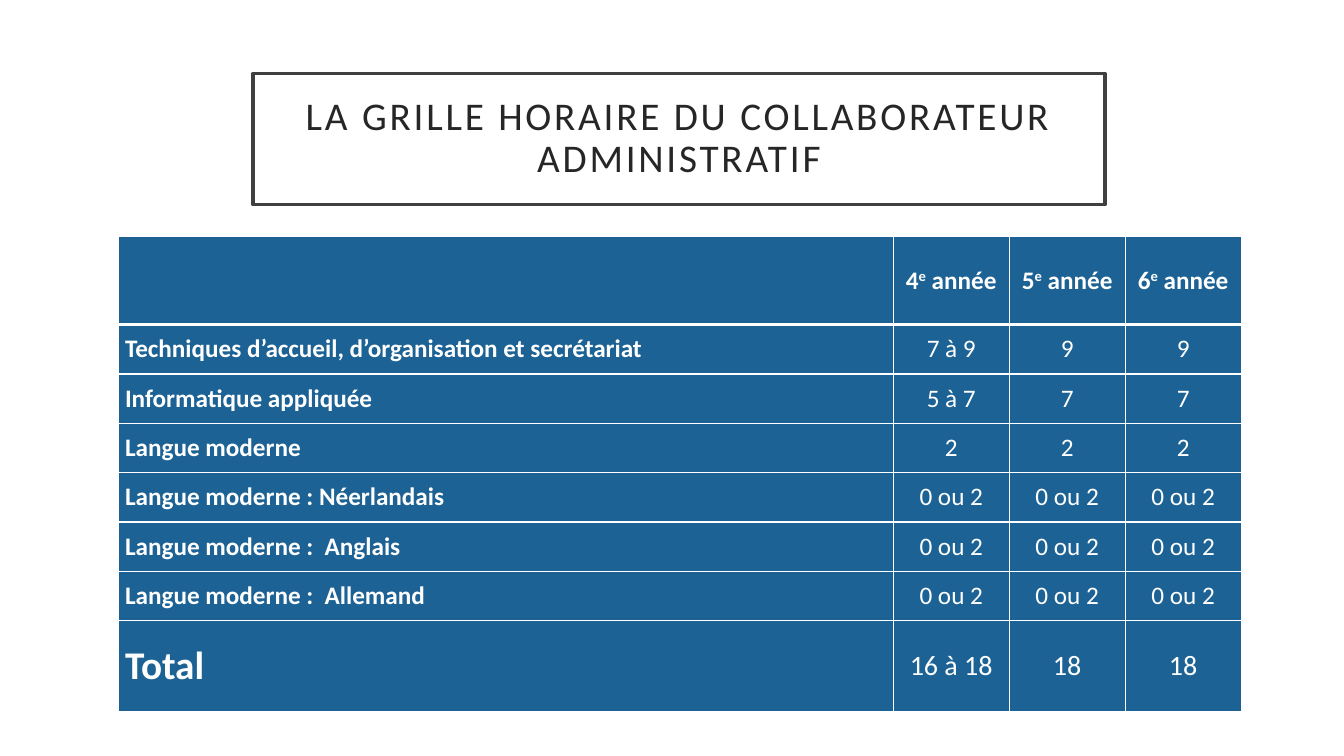
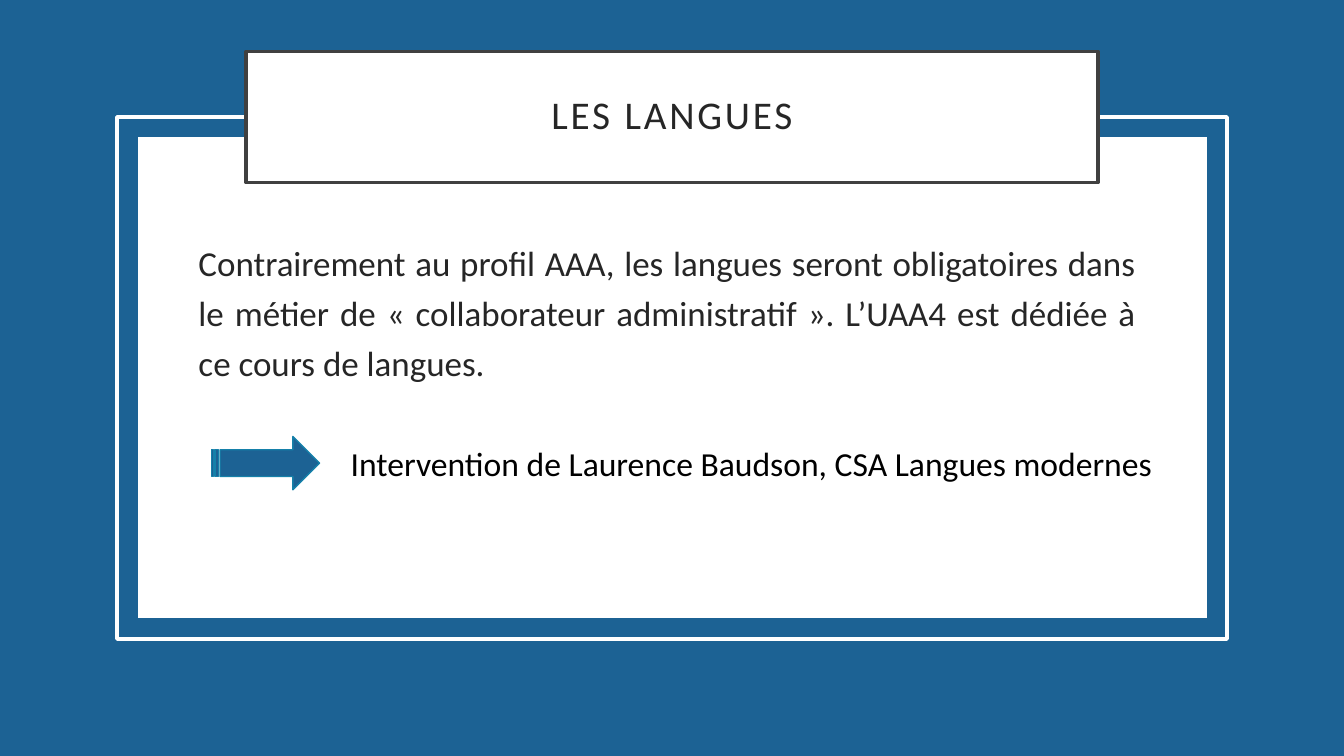
from dataclasses import dataclass

from lxml.etree import SubElement
from pptx import Presentation
from pptx.dml.color import RGBColor
from pptx.enum.shapes import MSO_SHAPE
from pptx.enum.text import MSO_ANCHOR, MSO_AUTO_SIZE, PP_ALIGN
from pptx.oxml import parse_xml
from pptx.oxml.ns import nsdecls, qn
from pptx.util import Inches, Pt


@dataclass(frozen=True)
class Theme:
    font: str = "Calibri"
    blue: str = "1C6294"
    arrow_edge: str = "1580A9"
    white: str = "FFFFFF"
    black: str = "000000"
    ink: str = "262626"
    frame: str = "404040"
    title: float = 28
    body: float = 25
    note: float = 24
    cell: float = 18
    total: float = 20
    thick: float = 2.5
    thin: float = 1


T = Theme()

# Content
GRID_TITLE = "LA GRILLE HORAIRE DU COLLABORATEUR ADMINISTRATIF"
YEARS = ["4", "5", "6"]
COURSES = [
    ("Techniques d’accueil, d’organisation et secrétariat", "7 à 9", "9", "9"),
    ("Informatique appliquée", "5 à 7", "7", "7"),
    ("Langue moderne", "2", "2", "2"),
    ("Langue moderne : Néerlandais", "0 ou 2", "0 ou 2", "0 ou 2"),
    ("Langue moderne :  Anglais", "0 ou 2", "0 ou 2", "0 ou 2"),
    ("Langue moderne :  Allemand", "0 ou 2", "0 ou 2", "0 ou 2"),
]
TOTAL = ("Total", "16 à 18", "18", "18")

LANG_TITLE = "LES LANGUES"
LANG_BODY = (
    "Contrairement au profil AAA, les langues seront obligatoires dans le métier de "
    "« collaborateur administratif ». L’UAA4 est dédiée à ce cours de langues."
)
LANG_NOTE = "Intervention de Laurence Baudson, CSA Langues modernes"

# Table measures
COL_WIDTHS = [7.69] + [1.15] * len(YEARS)
ROW_HEIGHTS = [0.87] + [0.49] * len(COURSES) + [0.9]


def rgb(value):
    return RGBColor.from_string(value)


def style(p, size, color, align=PP_ALIGN.LEFT, bold=False):
    p.alignment = align
    p.font.name = T.font
    p.font.size = Pt(size)
    p.font.bold = bold
    p.font.color.rgb = rgb(color)


def paint(shape, fill=None, line=None, width=T.thick):
    if fill:
        shape.fill.solid()
        shape.fill.fore_color.rgb = rgb(fill)
    else:
        shape.fill.background()
    if line:
        shape.line.color.rgb = rgb(line)
        shape.line.width = Pt(width)
    else:
        shape.line.fill.background()


def add_box(s, kind, box, **look):
    sp = s.shapes.add_shape(kind, *map(Inches, box))
    sp.shadow.inherit = False
    paint(sp, **look)


def add_text(s, box, text, size, color, align=PP_ALIGN.LEFT, spacing=None):
    tf = s.shapes.add_textbox(*map(Inches, box)).text_frame
    tf.word_wrap = True
    p = tf.paragraphs[0]
    p.text = text
    style(p, size, color, align)
    p.line_spacing = spacing


def set_title(s, text, left, top):
    """Place the framed title in front of everything drawn so far."""
    title = s.shapes.title
    title.left, title.top, title.width, title.height = map(Inches, (left, top, 8.45, 1.3))
    paint(title, T.white, T.frame)
    tf = title.text_frame
    tf.word_wrap = True
    tf.auto_size = MSO_AUTO_SIZE.NONE
    tf.vertical_anchor = MSO_ANCHOR.MIDDLE
    tf.margin_left = tf.margin_right = tf.margin_top = tf.margin_bottom = Inches(0.2)
    p = tf.paragraphs[0]
    r = p.add_run()
    r.text = text
    style(p, T.title, T.ink, PP_ALIGN.CENTER)
    p.line_spacing = 0.9
    r.font._element.set("spc", "200")
    s.shapes._spTree.append(title._element)


def set_borders(cell, bottom):
    tc_pr = cell._tc.get_or_add_tcPr()
    widths = {"lnL": T.thin, "lnR": T.thin, "lnT": T.thin, "lnB": bottom}
    for i, (tag, width) in enumerate(widths.items()):
        ln = parse_xml(f'<a:{tag} {nsdecls("a")} w="{Pt(width)}"/>')
        fill = SubElement(ln, qn("a:solidFill"))
        SubElement(fill, qn("a:srgbClr"), val=T.white)
        tc_pr.insert(i, ln)


def fill_cell(cell, runs, size, align, bold, bottom=T.thin):
    cell.fill.solid()
    cell.fill.fore_color.rgb = rgb(T.blue)
    set_borders(cell, bottom)
    cell.vertical_anchor = MSO_ANCHOR.MIDDLE
    cell.margin_left = cell.margin_right = Inches(0.07)
    cell.margin_top = cell.margin_bottom = 0
    p = cell.text_frame.paragraphs[0]
    for text, raised in runs:
        r = p.add_run()
        r.text = text
        if raised:
            r.font._element.set("baseline", "30000")
    style(p, size, T.white, align, bold)
    p.space_after = Pt(10)


def add_schedule(s):
    table = s.shapes.add_table(
        len(ROW_HEIGHTS), len(COL_WIDTHS), Inches(1.17), Inches(2.35),
        Inches(sum(COL_WIDTHS)), Inches(sum(ROW_HEIGHTS))).table
    for column, width in zip(table.columns, COL_WIDTHS):
        column.width = Inches(width)
    for row, height in zip(table.rows, ROW_HEIGHTS):
        row.height = Inches(height)

    # Header row
    fill_cell(table.cell(0, 0), [], T.cell, PP_ALIGN.LEFT, True, bottom=3)
    for j, year in enumerate(YEARS, 1):
        runs = [(year, False), ("e", True), (" année", False)]
        fill_cell(table.cell(0, j), runs, T.cell, PP_ALIGN.CENTER, True, bottom=3)

    # Courses and total
    for i, (name, *hours) in enumerate(COURSES + [TOTAL], 1):
        last = i > len(COURSES)
        fill_cell(table.cell(i, 0), [(name, False)],
                  T.title if last else T.cell, PP_ALIGN.LEFT, True)
        for j, text in enumerate(hours, 1):
            fill_cell(table.cell(i, j), [(text, False)],
                      T.total if last else T.cell, PP_ALIGN.CENTER, False)


def build_grid_slide(prs):
    s = prs.slides.add_slide(prs.slide_layouts[5])
    set_title(s, GRID_TITLE, 2.51, 0.73)
    add_schedule(s)


def build_language_slide(prs):
    s = prs.slides.add_slide(prs.slide_layouts[5])
    # Blue ground, white panel and outline
    add_box(s, MSO_SHAPE.RECTANGLE, (0, 0, 13.33, 7.5), fill=T.blue)
    add_box(s, MSO_SHAPE.RECTANGLE, (1.37, 1.36, 10.6, 4.77), fill=T.white)
    add_box(s, MSO_SHAPE.RECTANGLE, (1.16, 1.16, 11.01, 5.18), line=T.white)
    set_title(s, LANG_TITLE, 2.44, 0.51)
    # Statement, then the arrow with its note
    add_text(s, (1.87, 2.26, 9.49, 1.66), LANG_BODY, T.body, T.ink, PP_ALIGN.JUSTIFY, 1.2)
    add_box(s, MSO_SHAPE.STRIPED_RIGHT_ARROW, (2.1, 4.33, 1.07, 0.53),
            fill=T.blue, line=T.arrow_edge, width=T.thin)
    add_text(s, (3.38, 4.34, 8.26, 0.5), LANG_NOTE, T.note, T.black)


def main():
    prs = Presentation()
    prs.slide_width, prs.slide_height = Inches(13.33), Inches(7.5)
    build_grid_slide(prs)
    build_language_slide(prs)
    prs.save("out.pptx")


if __name__ == "__main__":
    main()
